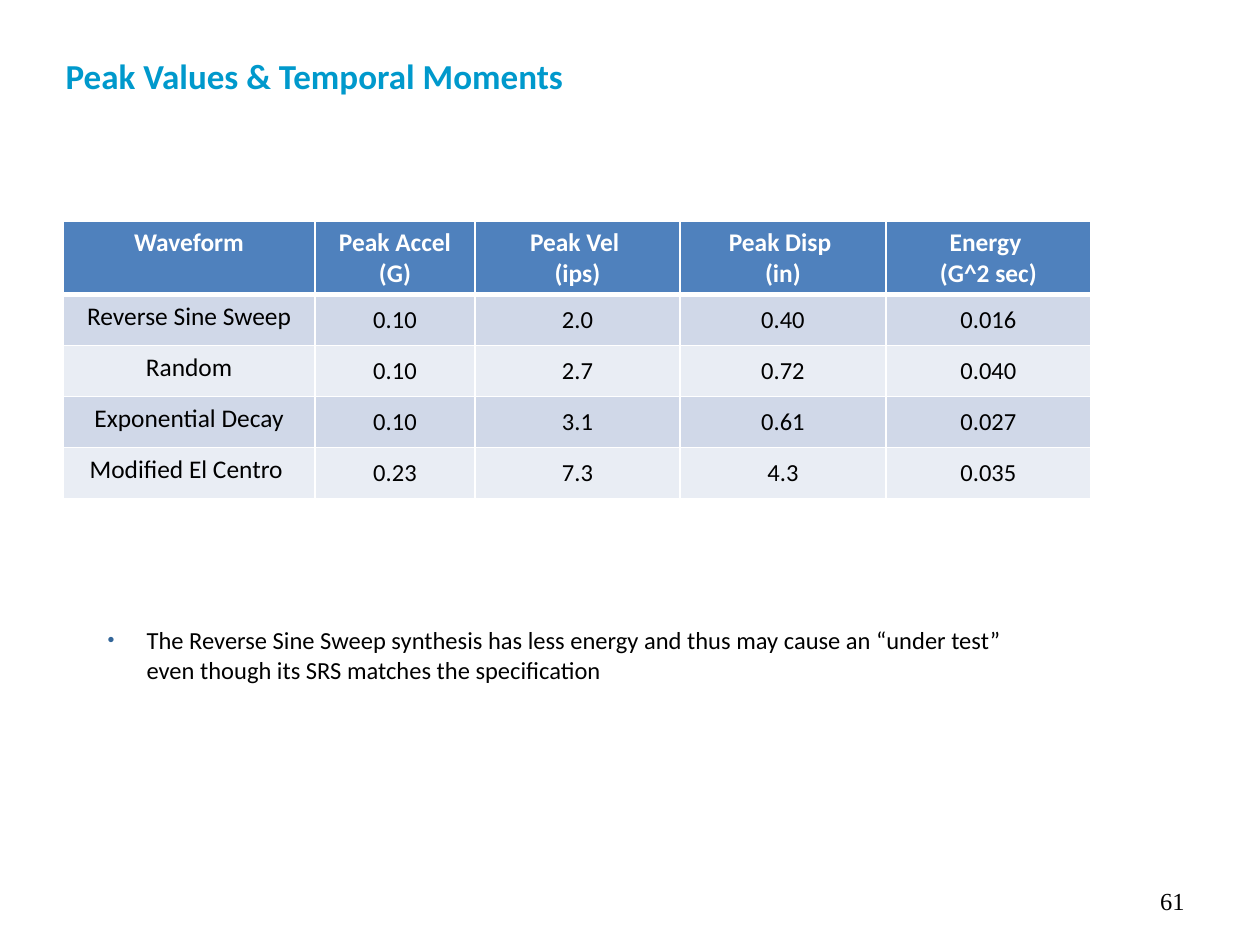
"""Build the slide on peak values and temporal moments."""
from lxml import etree
from pptx import Presentation, util as u
from pptx.dml.color import RGBColor
from pptx.enum import text as t
from pptx.oxml import ns

BLACK = RGBColor(0x00, 0x00, 0x00)
INK = RGBColor(0x01, 0x00, 0x00)
WHITE = RGBColor(0xFF, 0xFF, 0xFF)
CYAN = RGBColor(0x00, 0x99, 0xCC)
STEEL = RGBColor(0x33, 0x66, 0x99)
BLUE = RGBColor(0x4F, 0x81, 0xBD)
BANDS = RGBColor(0xE9, 0xED, 0xF4), RGBColor(0xD0, 0xD8, 0xE8)
LEFT, MID, RIGHT = t.PP_ALIGN.LEFT, t.PP_ALIGN.CENTER, t.PP_ALIGN.RIGHT
SCALE = 914400 / 126


def px(*nums):
    return [u.Emu(round(n * SCALE)) for n in nums]


def style(para, size, color, align=LEFT, bold=False, face="Calibri"):
    para.alignment = align
    font = para.font
    font.name, font.size, font.bold = face, u.Pt(size), bold
    font.color.rgb = color


deck = Presentation()
deck.slide_width, deck.slide_height = px(1260, 945)
slide = deck.slides.add_slide(deck.slide_layouts[1])

title = slide.shapes.title
title.left, title.top, title.width, title.height = px(53, 48, 527, 55)
frame = title.text_frame
frame.text = "Peak Values & Temporal Moments"
frame.word_wrap = False
frame.auto_size = t.MSO_AUTO_SIZE.NONE
frame.vertical_anchor = t.MSO_ANCHOR.TOP
style(frame.paragraphs[0], 20, CYAN, bold=True)

body = slide.placeholders[1]
body.left, body.top, body.width, body.height = px(95, 619, 966, 74)
frame = body.text_frame
frame.text = (
    "The Reverse Sine Sweep synthesis has less energy and thus may cause "
    "an “under test” even though its SRS matches the specification"
)
frame.auto_size = t.MSO_AUTO_SIZE.NONE
note = frame.paragraphs[0]
note.space_before = u.Pt(0)
props = note._p.get_or_add_pPr()
dent = px(39)[0]
props.set("marL", str(dent))
props.set("indent", str(-dent))
tint = etree.SubElement(props, ns.qn("a:buClr"))
etree.SubElement(tint, ns.qn("a:srgbClr"), val=str(STEEL))
etree.SubElement(props, ns.qn("a:buSzPct"), val="80000")
etree.SubElement(props, ns.qn("a:buFont"), typeface="Arial")
etree.SubElement(props, ns.qn("a:buChar"), char="•")
style(note, 14, BLACK)

page = slide.shapes.add_textbox(*px(903, 876, 294, 50))
frame = page.text_frame
frame.text = "61"
frame.word_wrap = True
frame.vertical_anchor = t.MSO_ANCHOR.MIDDLE
style(frame.paragraphs[0], 14, INK, RIGHT, face="Times New Roman")

rows = [
    ("Waveform", "Peak Accel (G)", "Peak Vel \v(ips)", "Peak Disp \v(in)",
     "Energy \v(G^2 sec)"),
    ("Reverse Sine Sweep", "0.10", "2.0", "0.40", "0.016"),
    ("Random", "0.10", "2.7", "0.72", "0.040"),
    ("Exponential Decay", "0.10", "3.1", "0.61", "0.027"),
    ("Modified El Centro ", "0.23", "7.3", "4.3", "0.035"),
]
wide = [252, 160, 205, 206, 205]
high = [73] + [51] * 4
table = slide.shapes.add_table(
    len(rows), len(wide), *px(63, 221, sum(wide), sum(high))).table
for col, size in zip(table.columns, px(*wide)):
    col.width = size
for row, size in zip(table.rows, px(*high)):
    row.height = size

for r, row in enumerate(rows):
    for c, words in enumerate(row):
        cell = table.cell(r, c)
        cell.text = words
        head = r == 0
        value = r > 0 and c > 0
        if value:
            cell.vertical_anchor = t.MSO_ANCHOR.MIDDLE
            cell.margin_left, cell.margin_right = px(1, 1)
            cell.margin_top, cell.margin_bottom = px(1, 0)
        style(cell.text_frame.paragraphs[0], 14 if value else 14.5,
              WHITE if head else BLACK, MID, head)
        props = cell._tc.get_or_add_tcPr()
        for side in "LRTB":
            thick = (r, side) in ((0, "B"), (1, "T"))
            line = etree.SubElement(props, ns.qn("a:ln" + side),
                                    w=str(u.Pt(3 if thick else 1)))
            paint = etree.SubElement(line, ns.qn("a:solidFill"))
            etree.SubElement(paint, ns.qn("a:srgbClr"), val=str(WHITE))
        cell.fill.solid()
        cell.fill.fore_color.rgb = BLUE if head else BANDS[r % 2]

deck.save("out.pptx")
